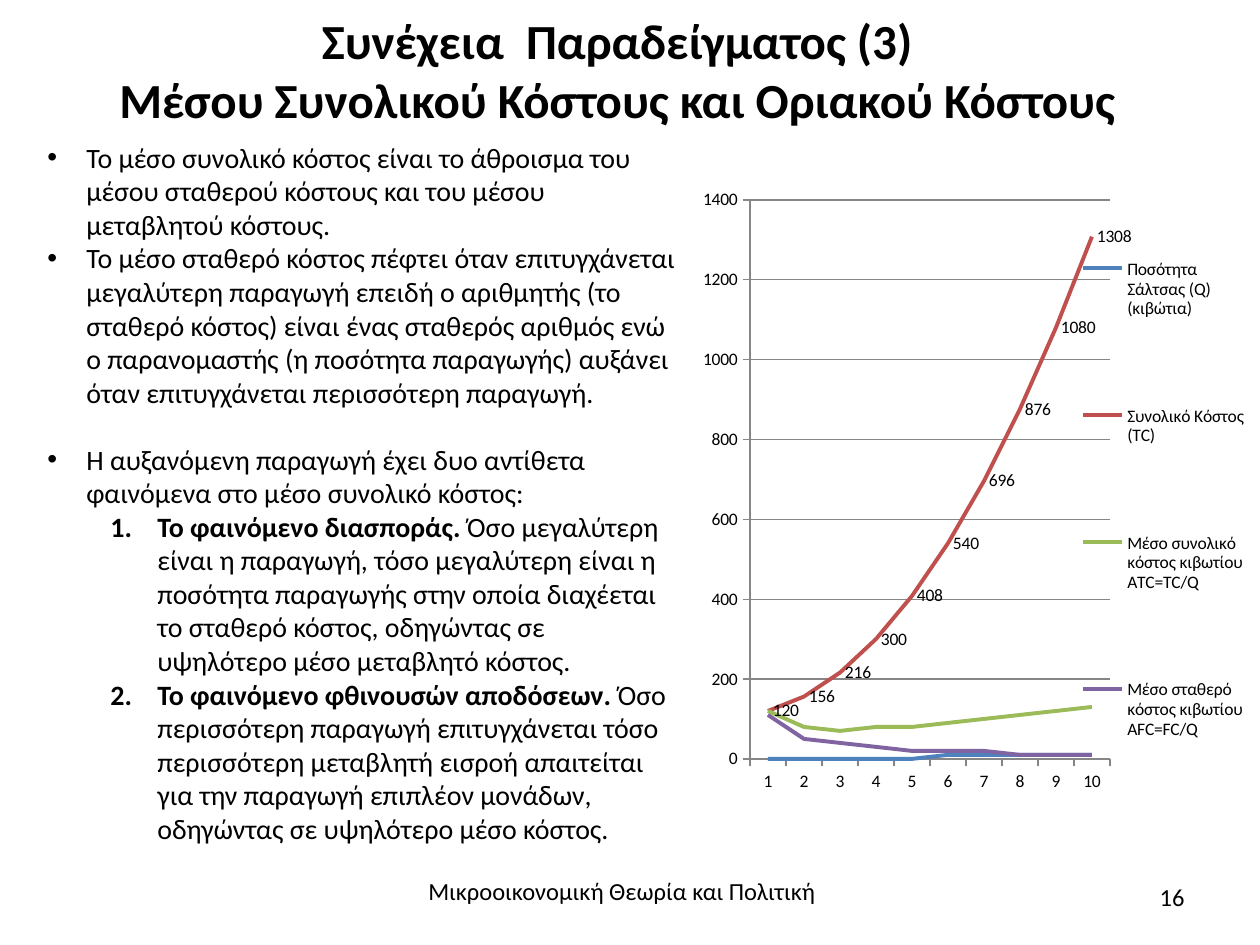
"""Builds the slide on average total cost and marginal cost."""
from lxml.etree import SubElement
from pptx import Presentation
from pptx.chart.data import CategoryChartData
from pptx.dml.color import RGBColor
from pptx.enum.chart import XL_CHART_TYPE as ChartType
from pptx.enum.chart import XL_LABEL_POSITION as LabelPosition
from pptx.enum.chart import XL_LEGEND_POSITION as LegendPosition
from pptx.enum.chart import XL_TICK_MARK as TickMark
from pptx.enum.text import MSO_ANCHOR as Anchor
from pptx.enum.text import MSO_AUTO_SIZE as AutoSize
from pptx.enum.text import PP_ALIGN as Align
from pptx.oxml import parse_xml
from pptx.oxml.ns import nsdecls, qn
from pptx.util import Emu, Pt

FONT = "Calibri"
BLACK = RGBColor(0, 0, 0)
GRAY = RGBColor(0x86, 0x86, 0x86)
BLUE = RGBColor(0x4F, 0x81, 0xBD)
RED = RGBColor(0xC0, 0x50, 0x4D)
GREEN = RGBColor(0x9B, 0xBB, 0x59)
PURPLE = RGBColor(0x80, 0x64, 0xA2)

TITLE = "Συνέχεια  Παραδείγματος (3) \vΜέσου Συνολικού Κόστους και Οριακού Κόστους "
FOOTER = "Μικροοικονομική\u00a0Θεωρία και Πολιτική"
PAGE_NUMBER = "16"

POINTS = [
    (0, 0, "", "Το μέσο συνολικό κόστος είναι το άθροισμα του μέσου σταθερού κόστους "
     "και του μέσου μεταβλητού κόστους."),
    (0, 0, "", "Το μέσο σταθερό κόστος πέφτει όταν επιτυγχάνεται μεγαλύτερη παραγωγή "
     "επειδή ο αριθμητής (το σταθερό κόστος) είναι ένας σταθερός αριθμός ενώ ο "
     "παρανομαστής (η ποσότητα παραγωγής) αυξάνει όταν επιτυγχάνεται περισσότερη "
     "παραγωγή."),
    (0, 19, "", "Η αυξανόμενη παραγωγή έχει δυο αντίθετα φαινόμενα στο μέσο συνολικό "
     "κόστος:"),
    (1, 0, "Το φαινόμενο διασποράς.", " Όσο μεγαλύτερη είναι η παραγωγή, τόσο "
     "μεγαλύτερη είναι η ποσότητα παραγωγής στην οποία διαχέεται το σταθερό κόστος, "
     "οδηγώντας σε υψηλότερο μέσο μεταβλητό κόστος."),
    (1, 0, "Το φαινόμενο φθινουσών αποδόσεων.", " Όσο περισσότερη παραγωγή "
     "επιτυγχάνεται τόσο περισσότερη μεταβλητή εισροή απαιτείται για την παραγωγή "
     "επιπλέον μονάδων, οδηγώντας σε υψηλότερο μέσο κόστος."),
]
BULLETS = [
    (39, -39, "buChar", {"char": "•"}),
    (110, -47, "buAutoNum", {"type": "arabicPeriod"}),
]

QUANTITIES = range(1, 11)
SERIES = [
    ("Ποσότητα Σάλτσας (Q) (κιβώτια)", [0, 0, 0, 0, 0, 10, 10, 10, 10, 10], BLUE),
    ("Συνολικό Κόστος (TC)", [120, 156, 216, 300, 408, 540, 696, 876, 1080, 1308], RED),
    ("Μέσο συνολικό κόστος κιβωτίου ATC=TC/Q",
     [120, 80, 70, 80, 80, 90, 100, 110, 120, 130], GREEN),
    ("Μέσο σταθερό κόστος κιβωτίου AFC=FC/Q",
     [110, 50, 40, 30, 20, 20, 20, 10, 10, 10], PURPLE),
]
CHART_BOX = (689, 145, 567, 704)
PLOT_BOX = (61, 55, 360, 559)
LEGEND_BOX = (402, 27, 163, 655)


def px(length):
    return Emu(round(length * 914400 / 126))


def style_font(font, size, bold=None):
    font.name, font.size, font.bold = FONT, Pt(size), bold
    font.color.rgb = BLACK


def add_text_box(slide, box):
    frame = slide.shapes.add_textbox(*map(px, box)).text_frame
    frame.word_wrap = True
    return frame


def add_label(slide, box, text, align):
    paragraph = add_text_box(slide, box).paragraphs[0]
    paragraph.text, paragraph.alignment = text, align
    style_font(paragraph.font, 14)


def add_points(slide, box):
    frame = add_text_box(slide, box)
    for index, (level, space, lead, text) in enumerate(POINTS):
        paragraph = frame.add_paragraph() if index else frame.paragraphs[0]
        paragraph.level = level
        margin, indent, tag, attributes = BULLETS[level]
        properties = paragraph._p.get_or_add_pPr()
        properties.set("marL", str(px(margin)))
        properties.set("indent", str(px(indent)))
        if space:
            paragraph.space_before = Pt(space)
        if level == 0:
            SubElement(properties, qn("a:buFont"), typeface="Arial")
        SubElement(properties, qn("a:" + tag), **attributes)
        style_font(paragraph.font, 16)
        if lead:
            run = paragraph.add_run()
            run.text, run.font.bold = lead, True
        paragraph.add_run().text = text


def place_in_chart(element, index, box, target=""):
    for layout in element.findall(qn("c:layout")):
        element.remove(layout)
    modes = "".join(f'<c:{name}Mode val="edge"/>' for name in "xy")
    sizes = "".join(f'<c:{name} val="{length / CHART_BOX[2 + number % 2]}"/>'
                    for number, (name, length) in enumerate(zip("xywh", box)))
    element.insert(index, parse_xml(
        f'<c:layout {nsdecls("c")}><c:manualLayout>{target}{modes}{sizes}'
        '</c:manualLayout></c:layout>'))


def add_cost_chart(slide):
    data = CategoryChartData()
    data.categories = [str(quantity) for quantity in QUANTITIES]
    for name, values, _ in SERIES:
        data.add_series(name, values)
    chart = slide.shapes.add_chart(ChartType.LINE, *map(px, CHART_BOX), data).chart
    chart.has_title = False
    style_font(chart.font, 10)

    plot = chart.plots[0]
    plot.vary_by_categories = False
    for series, (_, _, color) in zip(plot.series, SERIES):
        series.smooth = False
        series.format.line.color.rgb = color
        series.format.line.width = Pt(2.25)
    labels = plot.series[1].data_labels
    labels.show_value = True
    labels.position = LabelPosition.RIGHT

    value_axis = chart.value_axis
    value_axis.minimum_scale, value_axis.maximum_scale = 0, 1400
    value_axis.major_unit = 200
    value_axis.has_major_gridlines = True
    value_axis.major_gridlines.format.line.color.rgb = GRAY
    for axis in (chart.category_axis, value_axis):
        axis.major_tick_mark = TickMark.OUTSIDE
        axis.minor_tick_mark = TickMark.NONE
        axis.format.line.color.rgb = GRAY

    chart.has_legend = True
    chart.legend.position = LegendPosition.RIGHT
    chart.legend.include_in_layout = False
    place_in_chart(chart.legend._element, 1, LEGEND_BOX)
    place_in_chart(chart._chartSpace.chart.plotArea, 0, PLOT_BOX,
                   '<c:layoutTarget val="inner"/>')


def main():
    presentation = Presentation()
    presentation.slide_width, presentation.slide_height = px(1260), px(945)
    slide = presentation.slides.add_slide(presentation.slide_layouts[5])

    title = slide.shapes.title
    title.left, title.top, title.width, title.height = map(px, (0, 4, 1245, 130))
    frame = title.text_frame
    frame.text = TITLE
    frame.word_wrap, frame.auto_size = True, AutoSize.NONE
    frame.vertical_anchor = Anchor.MIDDLE
    frame.paragraphs[0].alignment = Align.CENTER
    style_font(frame.paragraphs[0].font, 28, True)

    add_label(slide, (329, 870, 586, 69), FOOTER, Align.CENTER)
    add_label(slide, (903, 876, 294, 50), PAGE_NUMBER, Align.RIGHT)
    add_points(slide, (35, 134, 655, 758))
    add_cost_chart(slide)
    presentation.save("out.pptx")


if __name__ == "__main__":
    main()
